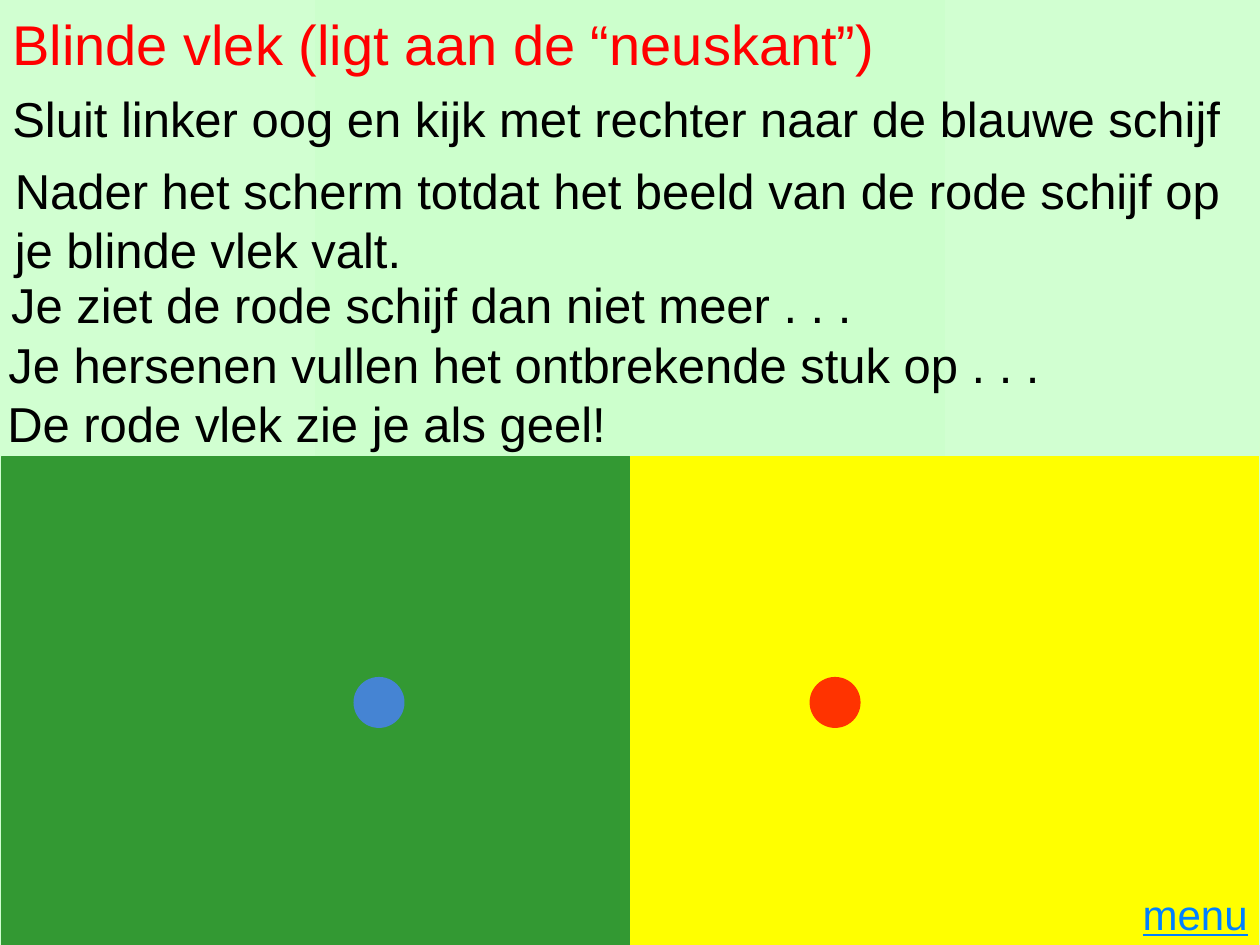
from copy import deepcopy

from pptx import Presentation
from pptx.dml.color import RGBColor
from pptx.enum.shapes import MSO_SHAPE
from pptx.enum.text import MSO_ANCHOR, PP_ALIGN
from pptx.util import Pt

RECT, OVAL = MSO_SHAPE.RECTANGLE, MSO_SHAPE.OVAL
MIDDLE, TOP = MSO_ANCHOR.MIDDLE, MSO_ANCHOR.TOP
LEFT, RIGHT = PP_ALIGN.LEFT, PP_ALIGN.RIGHT

HEX = {
    "edge": "D1FFD1", "mint": "CCFFCC", "yellow": "FFFF00", "green": "339933",
    "disc": "FF3300", "blue": "4584D3", "title": "FF0000", "black": "000000",
    "link": "0080FF",
}
RGB = {name: RGBColor.from_string(code) for name, code in HEX.items()}

WIDE, HIGH = 720, 540
deck = Presentation()
deck.slide_width, deck.slide_height = Pt(WIDE), Pt(HIGH)
slide = deck.slides.add_slide(deck.slide_layouts[6])

# Background: light green, a little paler at both sides
fill = slide.background.fill
fill.gradient()
fill.gradient_angle = 0
first = fill.gradient_stops[0]._gs
first.addnext(deepcopy(first))
for stop, (pos, name) in zip(fill.gradient_stops,
                             [(0, "edge"), (0.5, "mint"), (1, "edge")]):
    stop.position = pos
    stop.color.rgb = RGB[name]

# Two fields, each with a disc to look at
FIELD_TOP, FIELD_W, FIELD_H = 260.7, 358.6, 281.5
DISC_TOP, DISC = 387.2, 28.4
group = slide.shapes.add_group_shape()
for kind, name, x, y, w, h in [
    (RECT, "yellow", 360.6, FIELD_TOP, FIELD_W, FIELD_H),
    (RECT, "green", 1.2, FIELD_TOP, FIELD_W, FIELD_H),
    (OVAL, "disc", 463, DISC_TOP, DISC, DISC),
    (OVAL, "blue", 202.4, DISC_TOP, DISC, DISC),
]:
    shape = group.shapes.add_shape(kind, Pt(x), Pt(y), Pt(w), Pt(h))
    shape.shadow.inherit = False
    shape.fill.solid()
    shape.fill.fore_color.rgb = RGB[name]
    shape.line.color.rgb = RGB[name]
    shape.line.width = Pt(0.75)


def add_text(text, x, y, w, h, size=28, name="black", anchor=MIDDLE, align=LEFT):
    box = slide.shapes.add_textbox(Pt(x), Pt(y), Pt(w), Pt(h))
    frame = box.text_frame
    frame.word_wrap = True
    frame.vertical_anchor = anchor
    frame.text = text
    para = frame.paragraphs[0]
    para.alignment = align
    font = para.runs[0].font
    font.name, font.size = "Arial", Pt(size)
    font.color.rgb = RGB[name]
    return font


add_text("Blinde vlek (ligt aan de “neuskant”)", 0, 0, WIDE, 49, 32, "title")
for text, x, y, h in [
    ("Sluit linker oog en kijk met rechter naar de blauwe schijf", 0, 47.5, 39.6),
    ("Nader het scherm totdat het beeld van de rode schijf op je blinde vlek valt.",
     1.4, 88.6, 73.4),
    ("Je ziet de rode schijf dan niet meer . . .", -0.7, 145.4, 56.9),
    ("Je hersenen vullen het ontbrekende stuk op . . .", -2.2, 179.3, 56.9),
    ("De rode vlek zie je als geel!", -2.9, 213.1, 56.9),
]:
    add_text(text, x, y, WIDE, h)

menu = add_text("menu", 638, 504, 82, 36, 24, "link", TOP, RIGHT)
menu.underline = True

deck.save("out.pptx")
